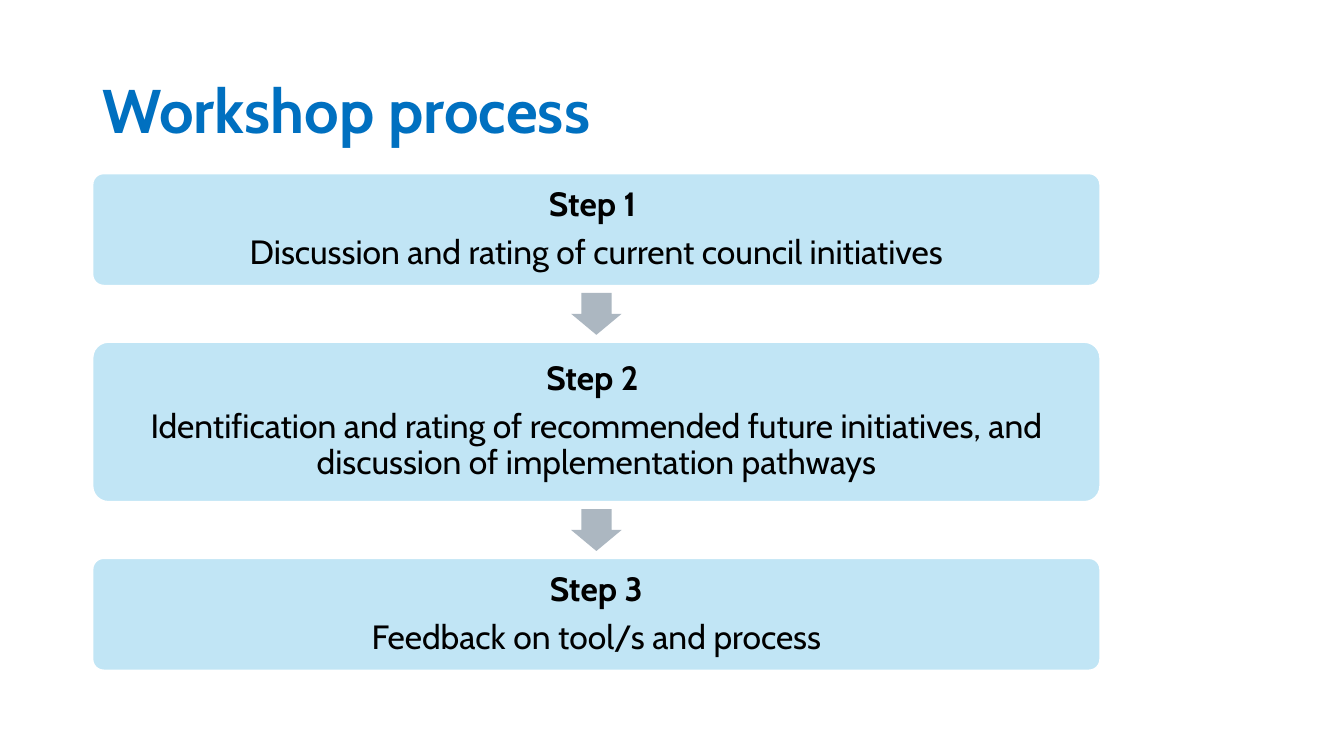
from pptx import Presentation
from pptx.dml.color import RGBColor
from pptx.enum.shapes import MSO_SHAPE
from pptx.enum.text import MSO_ANCHOR, PP_ALIGN
from pptx.util import Pt

TITLE_BLUE = RGBColor(0x00, 0x70, 0xC0)
STEP_BLUE = RGBColor(0xC1, 0xE5, 0xF5)
ARROW_GREY = RGBColor(0xAC, 0xB7, 0xC1)
BLACK = RGBColor(0, 0, 0)
WHITE = RGBColor(0xFF, 0xFF, 0xFF)

LEFT, TOP, WIDTH, GAP = 66, 123.8, 720, 40
STEPS = [
    ("Step 1 ", "Discussion and rating of current council initiatives", 80.4),
    ("Step 2 ", "Identification and rating of recommended future initiatives, "
                "and discussion of implementation pathways", 114.4),
    ("Step 3", "Feedback on tool/s and process", 80.4),
]


class ProcessSlide:
    font_name = "Cabin"
    line_spacing = 0.9

    def __init__(self, slide):
        self.shapes = slide.shapes

    def style_text(self, para, text, size, color, bold):
        para.text = text
        para.line_spacing = self.line_spacing
        para.font.name = self.font_name
        para.font.size = Pt(size)
        para.font.color.rgb = color
        para.font.bold = bold

    def title(self, text, left, top, width, height):
        box = self.shapes.add_textbox(Pt(left), Pt(top), Pt(width), Pt(height))
        frame = box.text_frame
        frame.word_wrap = True
        frame.vertical_anchor = MSO_ANCHOR.MIDDLE
        self.style_text(frame.paragraphs[0], text, 44, TITLE_BLUE, True)

    def step(self, heading, detail, top, height):
        box = self.shapes.add_shape(MSO_SHAPE.ROUNDED_RECTANGLE,
                                    Pt(LEFT), Pt(top), Pt(WIDTH), Pt(height))
        box.shadow.inherit = False
        box.adjustments[0] = 0.1
        box.fill.solid()
        box.fill.fore_color.rgb = STEP_BLUE
        box.line.color.rgb = WHITE
        box.line.width = Pt(1.5)
        frame = box.text_frame
        frame.word_wrap = True
        frame.vertical_anchor = MSO_ANCHOR.MIDDLE
        frame.margin_left = frame.margin_right = Pt(7.2)
        frame.margin_top = frame.margin_bottom = Pt(7.2)
        paras = [frame.paragraphs[0], frame.add_paragraph()]
        for para, text, bold in zip(paras, (heading, detail), (True, False)):
            self.style_text(para, text, 24, BLACK, bold)
            para.alignment = PP_ALIGN.CENTER
            para.space_after = Pt(8.4)

    def arrow(self, center_x, center_y, length=30, breadth=36):
        arrow = self.shapes.add_shape(MSO_SHAPE.RIGHT_ARROW,
                                      Pt(center_x - length / 2),
                                      Pt(center_y - breadth / 2),
                                      Pt(length), Pt(breadth))
        arrow.rotation = 90
        arrow.adjustments[0] = 0.6
        arrow.adjustments[1] = 0.5
        arrow.shadow.inherit = False
        arrow.fill.solid()
        arrow.fill.fore_color.rgb = ARROW_GREY
        arrow.line.fill.background()


def main():
    deck = Presentation()
    deck.slide_width = Pt(960)
    deck.slide_height = Pt(540)
    page = ProcessSlide(deck.slides.add_slide(deck.slide_layouts[6]))
    page.title("Workshop process", LEFT, 28.8, 828, 104.4)
    top = TOP
    for index, (heading, detail, height) in enumerate(STEPS):
        if index:
            page.arrow(LEFT + WIDTH / 2, top - GAP / 2)
        page.step(heading, detail, top, height)
        top += height + GAP
    deck.save("out.pptx")


if __name__ == "__main__":
    main()
